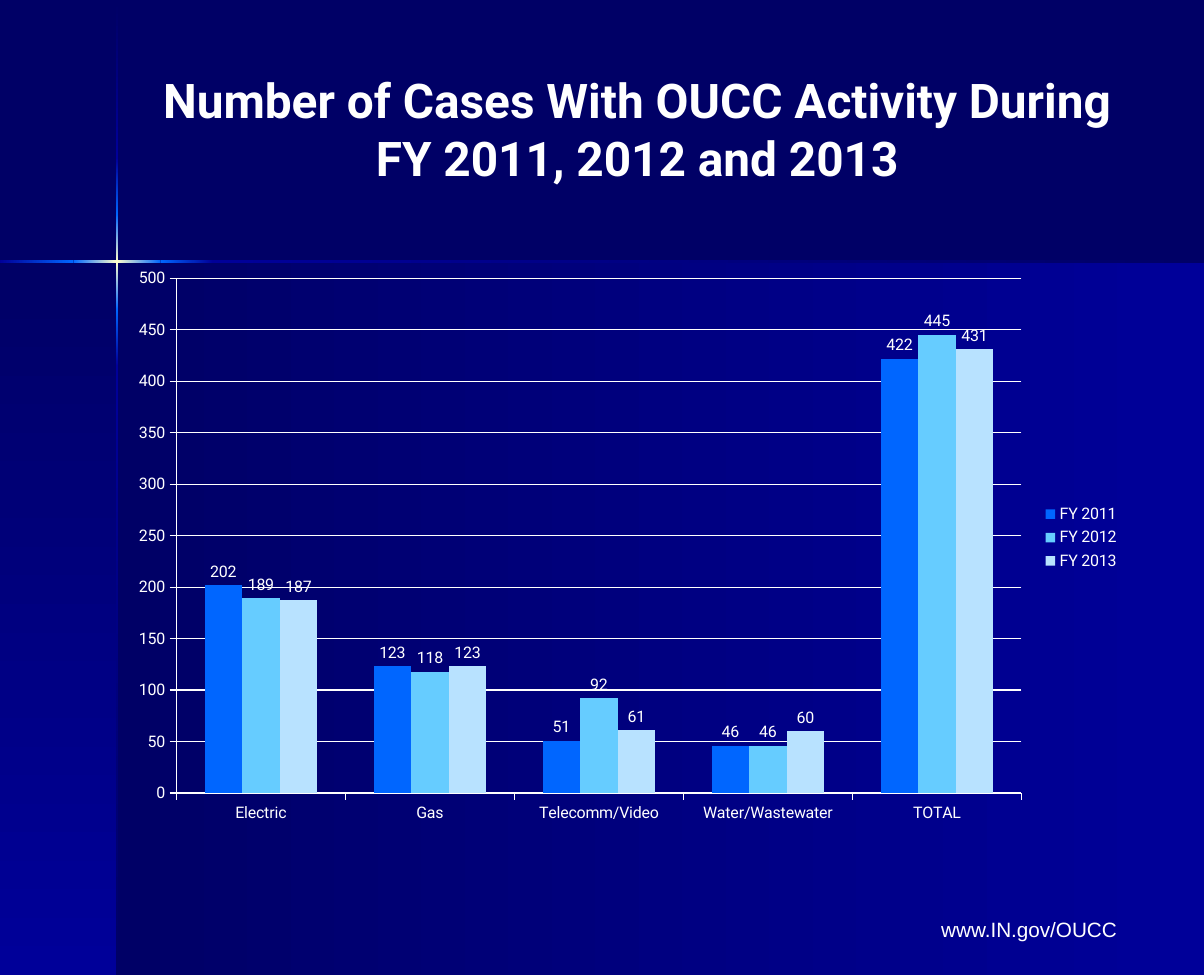
"""Build the slide on OUCC case activity for fiscal years 2011 to 2013."""
import copy

import pptx
import pptx.chart.data
import pptx.dml.color
import pptx.enum.chart
import pptx.enum.shapes
import pptx.enum.text
import pptx.oxml
import pptx.oxml.ns
import pptx.util

Inches = pptx.util.Inches
RGBColor = pptx.dml.color.RGBColor
NAVY = RGBColor(0x00, 0x00, 0x66)
ROYAL = RGBColor(0x00, 0x00, 0x99)
BLUE = RGBColor(0x00, 0x66, 0xFF)
SKY = RGBColor(0x66, 0xCC, 0xFF)
ICE = RGBColor(0xB8, 0xE2, 0xFF)
CREAM = RGBColor(0xFF, 0xFF, 0xCC)
WHITE = RGBColor(0xFF, 0xFF, 0xFF)

ACROSS, DOWN = 0, 270
BEAM = 0.02
BEAM_LEFT, BEAM_TOP = 1.01, 2.27
PANELS = [
    ((1.02, 2.28, 9.48, 6.22), ACROSS),
    ((0, 2.28, 1.02, 6.22), DOWN),
]
VERTICAL_BEAM = [
    (0.01, 1.38, [NAVY, ROYAL]),
    (3.19, 8.5, [ROYAL, NAVY]),
    (2.7, 3.19, [BLUE, ROYAL]),
    (1.38, 1.87, [ROYAL, BLUE]),
    (1.87, 2.7, [BLUE, CREAM, BLUE]),
]
HORIZONTAL_BEAM = [
    (1.86, 10.5, [ROYAL, NAVY]),
    (0, 0.64, [ROYAL, BLUE]),
    (1.4, 1.86, [BLUE, ROYAL]),
    (0.64, 1.4, [BLUE, CREAM, BLUE]),
]
CATEGORIES = ["Electric", "Gas", "Telecomm/Video", "Water/Wastewater", "TOTAL"]
SERIES = [
    ("FY 2011", (202, 123, 51, 46, 422), BLUE),
    ("FY 2012", (189, 118, 92, 46, 445), SKY),
    ("FY 2013", (187, 123, 61, 60, 431), ICE),
]


def apply(target, values):
    for name, value in values.items():
        setattr(target, name, value)


def place(element, index, box, inner=False):
    """Give a chart part a fixed layout in fractions of the chart."""
    for layout in element.xpath("./c:layout"):
        element.remove(layout)
    target = '<c:layoutTarget val="inner"/>' if inner else ""
    modes = '<c:xMode val="edge"/><c:yMode val="edge"/>'
    sizes = "".join(f'<c:{name} val="{value}"/>' for name, value in zip("xywh", box))
    element.insert(index, pptx.oxml.parse_xml(
        f'<c:layout {pptx.oxml.ns.nsdecls("c")}><c:manualLayout>'
        f"{target}{modes}{sizes}</c:manualLayout></c:layout>"))


class SlideBuilder:
    """Hold the style and the current slide."""

    heading_font = "Roboto"
    body_font = "Arial"
    chart_size = 10

    def __init__(self, presentation):
        self.slide = presentation.slides.add_slide(presentation.slide_layouts[6])
        self.slide.background.fill.solid()
        self.slide.background.fill.fore_color.rgb = NAVY

    def style(self, font, name, size, bold=False):
        apply(font, {"name": name, "size": pptx.util.Pt(size), "bold": bold})
        font.color.rgb = WHITE

    def gradient(self, box, colors, angle):
        shape = self.slide.shapes.add_shape(
            pptx.enum.shapes.MSO_SHAPE.RECTANGLE, *map(Inches, box))
        shape.shadow.inherit = False
        shape.line.fill.background()
        shape.fill.gradient()
        shape.fill.gradient_angle = angle
        stop_list = shape.element.xpath(".//a:gsLst")[0]
        for _ in colors[2:]:
            stop_list.append(copy.deepcopy(stop_list[0]))
        for index, (stop, color) in enumerate(zip(shape.fill.gradient_stops, colors)):
            stop.color.rgb = color
            stop.position = index / (len(colors) - 1)

    def text(self, box, text, font, size, frame_values, bold=False, alignment=None):
        frame = self.slide.shapes.add_textbox(*map(Inches, box)).text_frame
        apply(frame, {"word_wrap": True, **frame_values})
        paragraph = frame.paragraphs[0]
        paragraph.alignment = alignment
        run = paragraph.add_run()
        run.text = text
        self.style(run.font, font, size, bold)

    def chart(self, box):
        data = pptx.chart.data.CategoryChartData()
        data.categories = CATEGORIES
        for name, values, _ in SERIES:
            data.add_series(name, values)
        chart = self.slide.shapes.add_chart(
            pptx.enum.chart.XL_CHART_TYPE.COLUMN_CLUSTERED, *map(Inches, box), data).chart
        apply(chart, {"has_title": False, "has_legend": True})
        self.style(chart.font, self.heading_font, self.chart_size)
        apply(chart.legend, {"position": pptx.enum.chart.XL_LEGEND_POSITION.RIGHT,
                             "include_in_layout": False})
        self.style(chart.legend.font, self.heading_font, self.chart_size)
        plot = chart.plots[0]
        apply(plot, {"gap_width": 150, "overlap": 0, "vary_by_categories": False})
        for series, (_, _, color) in zip(plot.series, SERIES):
            series.format.fill.solid()
            series.format.fill.fore_color.rgb = color
            labels = series.data_labels
            apply(labels, {"show_value": True,
                           "position": pptx.enum.chart.XL_LABEL_POSITION.OUTSIDE_END})
            self.style(labels.font, self.heading_font, self.chart_size)
        apply(chart.value_axis, {"minimum_scale": 0, "maximum_scale": 500,
                                 "major_unit": 50, "has_major_gridlines": True})
        for axis in (chart.category_axis, chart.value_axis):
            apply(axis, {"major_tick_mark": pptx.enum.chart.XL_TICK_MARK.OUTSIDE,
                         "minor_tick_mark": pptx.enum.chart.XL_TICK_MARK.NONE})
            self.style(axis.tick_labels.font, self.heading_font, self.chart_size)
        for part in (chart.category_axis, chart.value_axis, chart.value_axis.major_gridlines):
            part.format.line.width = pptx.util.Pt(0.75)
            part.format.line.color.rgb = WHITE
        place(chart.element.xpath(".//c:plotArea")[0], 0, (0.064, 0.094, 0.83, 0.816), True)
        place(chart.element.xpath(".//c:legend")[0], 1, (0.91, 0.445, 0.085, 0.12))


def main():
    presentation = pptx.Presentation()
    apply(presentation, {"slide_width": Inches(10.5), "slide_height": Inches(8.5)})
    builder = SlideBuilder(presentation)
    for box, angle in PANELS:
        builder.gradient(box, [NAVY, ROYAL], angle)
    for top, bottom, colors in VERTICAL_BEAM:
        builder.gradient((BEAM_LEFT, top, BEAM, bottom - top), colors, DOWN)
    for left, right, colors in HORIZONTAL_BEAM:
        builder.gradient((left, BEAM_TOP, right - left, BEAM), colors, ACROSS)
    builder.text((8.11, 7.94, 1.77, 0.32), "www.IN.gov/OUCC", builder.body_font, 13,
                 {"margin_right": 0})
    builder.text((1.23, 0.38, 8.66, 1.77),
                 "Number of Cases With OUCC Activity During FY 2011, 2012 and 2013",
                 builder.heading_font, 30,
                 {"vertical_anchor": pptx.enum.text.MSO_ANCHOR.MIDDLE,
                  "margin_bottom": Inches(0.34)},
                 bold=True, alignment=pptx.enum.text.PP_ALIGN.CENTER)
    builder.chart((0.97, 1.91, 8.88, 5.5))
    presentation.save("out.pptx")


if __name__ == "__main__":
    main()
